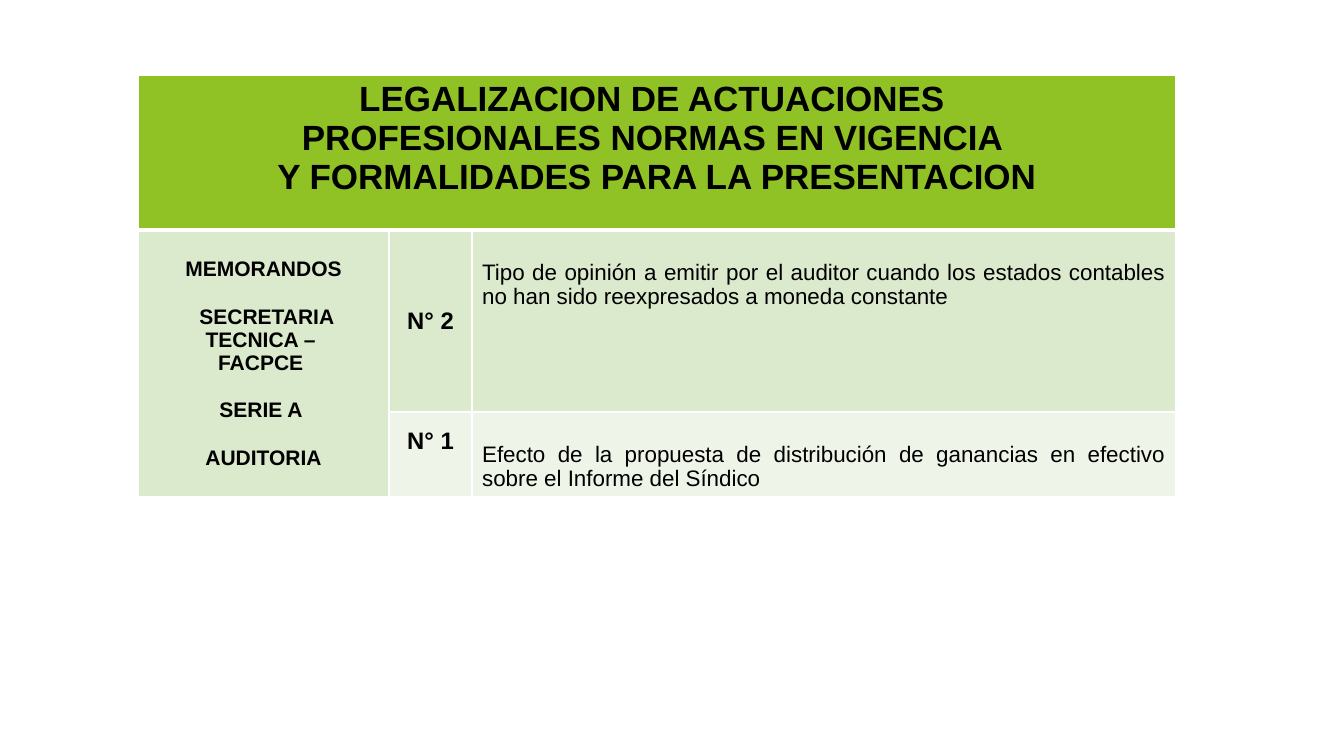
import pptx
import pptx.dml.color
import pptx.enum.text
import pptx.oxml
import pptx.oxml.ns
import pptx.util

ALIGN = pptx.enum.text.PP_ALIGN
ANCHOR = pptx.enum.text.MSO_ANCHOR
GREEN, LIGHT, PALE = "90C226", "DBE9CD", "EEF4E8"
BLACK, WHITE = "000000", "FFFFFF"
COLUMNS = (251, 83, 703)
ROWS = (155, 182, 85)


def px(length):
    return pptx.util.Emu(round(length * 914400 / 100.8))


def color(value):
    return pptx.dml.color.RGBColor.from_string(value)


def add_border(cell, side, width):
    """Draw one white side of a cell, width in points."""
    namespace = pptx.oxml.ns.nsdecls("a")
    line = pptx.oxml.parse_xml(
        f'<a:ln{side} {namespace} w="{pptx.util.Pt(width)}"><a:solidFill>'
        f'<a:srgbClr val="{WHITE}"/></a:solidFill></a:ln{side}>')
    cell._tc.get_or_add_tcPr().append(line)


def fill_cell(cell, lines, size, fill, align=ALIGN.CENTER, bold=True,
              anchor=ANCHOR.TOP, top=5, bottom=5, bottom_line=1):
    """Write (text, space before) lines into a cell and style it."""
    for side, width in (("L", 1), ("R", 1), ("T", 1), ("B", bottom_line)):
        add_border(cell, side, width)
    cell.fill.solid()
    cell.fill.fore_color.rgb = color(fill)
    cell.vertical_anchor = anchor
    cell.margin_top, cell.margin_bottom = px(top), px(bottom)
    frame = cell.text_frame
    for index, (text, gap) in enumerate(lines):
        para = frame.paragraphs[0] if index == 0 else frame.add_paragraph()
        para.add_run().text = text
        para.alignment = align
        if gap:
            para.space_before = pptx.util.Pt(gap)
        para.font.name = "Arial"
        para.font.size = pptx.util.Pt(size)
        para.font.bold = bold
        para.font.color.rgb = color(BLACK)


def add_grid(page):
    """Add the empty table with its column and row sizes."""
    frame = page.shapes.add_table(len(ROWS), len(COLUMNS), px(138), px(75),
                                  px(sum(COLUMNS)), px(sum(ROWS)))
    table = frame.table
    table.horz_banding = False
    for column, width in zip(table.columns, COLUMNS):
        column.width = px(width)
    for row, height in zip(table.rows, ROWS):
        row.height = px(height)
    return table


def main():
    deck = pptx.Presentation()
    deck.slide_width = pptx.util.Inches(13.33)
    deck.slide_height = pptx.util.Inches(7.5)
    page = deck.slides.add_slide(deck.slide_layouts[6])
    table = add_grid(page)

    # Heading across all columns
    table.cell(0, 0).merge(table.cell(0, 2))
    fill_cell(table.cell(0, 0), [
        ("LEGALIZACION DE ACTUACIONES ", 0),
        ("PROFESIONALES NORMAS EN VIGENCIA ", 0),
        ("Y FORMALIDADES PARA LA PRESENTACION", 0),
    ], 25, GREEN, bottom_line=3)

    # Series name beside both memoranda
    table.cell(1, 0).merge(table.cell(2, 0))
    fill_cell(table.cell(1, 0), [
        ("MEMORANDOS", 0),
        (" SECRETARIA TECNICA – ", 17),
        ("FACPCE ", 0),
        ("SERIE A ", 17),
        ("AUDITORIA", 17),
    ], 15, LIGHT, top=28)

    # Memoranda: number, subject, fill, space under the number
    memoranda = [
        ("N° 2", "Tipo de opinión a emitir por el auditor cuando los estados "
         "contables no han sido reexpresados a moneda constante", LIGHT, 5),
        ("N° 1", "Efecto de la propuesta de distribución de ganancias en "
         "efectivo sobre el Informe del Síndico", PALE, 31),
    ]
    for row, (number, subject, fill, bottom) in enumerate(memoranda, start=1):
        fill_cell(table.cell(row, 1), [(number, 0)], 17, fill,
                  anchor=ANCHOR.MIDDLE, bottom=bottom)
        fill_cell(table.cell(row, 2), [(subject, 0)], 16, fill,
                  align=ALIGN.JUSTIFY, bold=False, top=30)

    deck.save("out.pptx")


if __name__ == "__main__":
    main()
